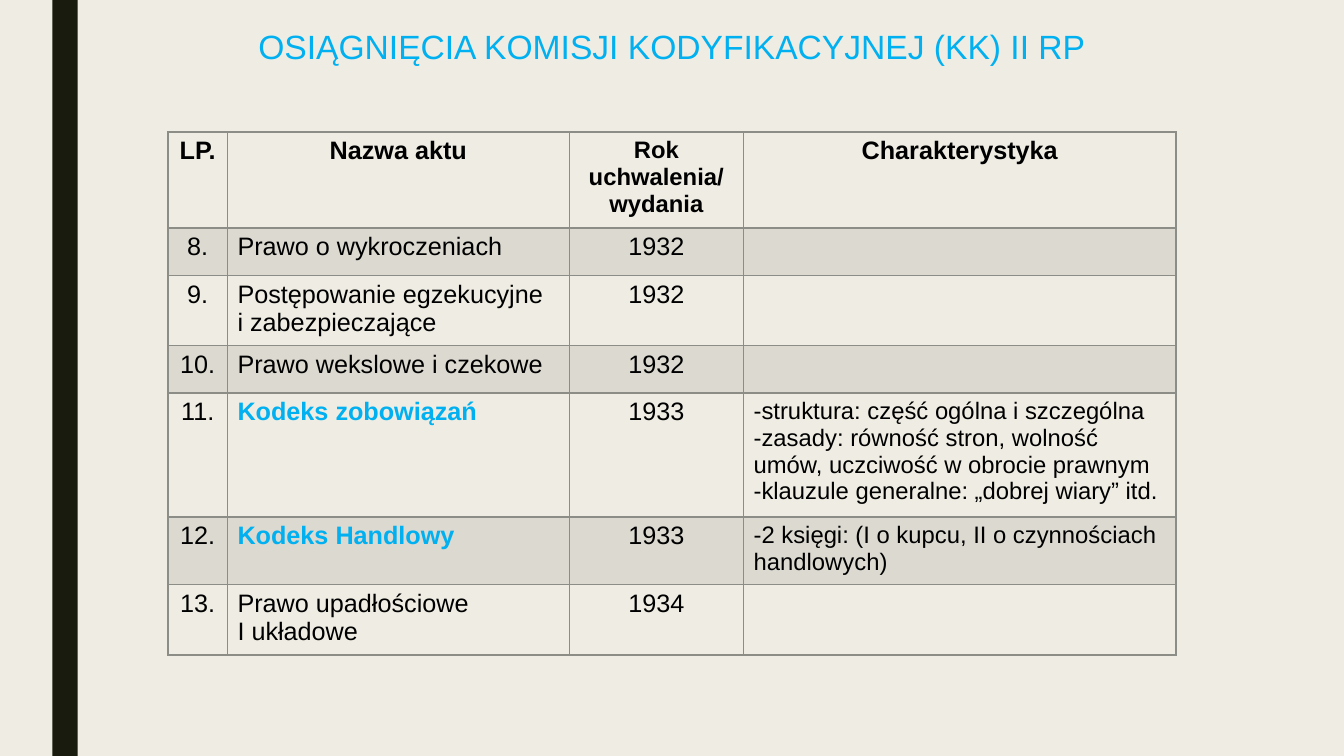
from dataclasses import dataclass

from lxml import etree
from pptx import Presentation
from pptx.dml.color import RGBColor
from pptx.enum.shapes import MSO_SHAPE
from pptx.enum.text import MSO_ANCHOR, PP_ALIGN
from pptx.oxml.ns import qn
from pptx.util import Inches, Pt

RECTANGLE = MSO_SHAPE.RECTANGLE
LEFT, CENTER = PP_ALIGN.LEFT, PP_ALIGN.CENTER
TOP = MSO_ANCHOR.TOP
TITLE_ONLY = 5
GRID_COLUMNS, GRID_ROWS = 80, 45


@dataclass(frozen=True)
class Theme:
    """Colours, font and type sizes of the deck."""
    font: str = "Arial"
    background: str = "EFEDE3"
    bar: str = "191B0E"
    accent: str = "00B0F0"
    text: str = "000000"
    rule: str = "8C8D86"
    band_opacity: int = 20
    title_size: int = 24
    cell_size: int = 18
    detail_size: int = 17


TITLE = "OSIĄGNIĘCIA KOMISJI KODYFIKACYJNEJ (KK) II RP"
HEADER = ("LP.", "Nazwa aktu", "Rok uchwalenia/ wydania", "Charakterystyka")
ACTS = [
    ("8.", "Prawo o wykroczeniach", "1932", ""),
    ("9.", "Postępowanie egzekucyjne\ni zabezpieczające", "1932", ""),
    ("10.", "Prawo wekslowe i czekowe", "1932", ""),
    ("11.", "Kodeks zobowiązań", "1933",
     "-struktura: część ogólna i szczególna\n"
     "-zasady: równość stron, wolność umów, uczciwość w obrocie prawnym\n"
     "-klauzule generalne: „dobrej wiary” itd."),
    ("12.", "Kodeks Handlowy", "1933",
     "-2 księgi: (I o kupcu, II o czynnościach handlowych)"),
    ("13.", "Prawo upadłościowe\nI układowe", "1934", ""),
]
COLUMN_WIDTHS = (3.54, 20.34, 10.38, 25.74)
ROW_HEIGHTS = (5.7, 2.82, 4.2, 2.82, 7.38, 4.02, 4.2)


class SlideBuilder:
    """Draws themed elements on the current slide, measured in grid units."""

    def __init__(self, deck, theme):
        """Add a slide with the theme's background."""
        self.theme = theme
        self.column = deck.slide_width / GRID_COLUMNS
        self.row = deck.slide_height / GRID_ROWS
        self.page = deck.slides.add_slide(deck.slide_layouts[TITLE_ONLY])
        self.paint(self.page.background.fill, theme.background)

    def paint(self, fill, color):
        """Make a fill solid in the given colour."""
        fill.solid()
        fill.fore_color.rgb = RGBColor.from_string(color)

    def frame(self, left, top, width, height):
        """Turn grid units into slide lengths."""
        return (round(left * self.column), round(top * self.row),
                round(width * self.column), round(height * self.row))

    def format_text(self, text_frame, size, color, align=LEFT, bold=False):
        """Apply one text style to every paragraph."""
        for para in text_frame.paragraphs:
            para.alignment = align
            para.font.size = Pt(size)
            for span in para.runs:
                span.font.name = self.theme.font
                span.font.size = Pt(size)
                span.font.bold = bold
                span.font.color.rgb = RGBColor.from_string(color)

    def bar(self, *place):
        """Draw the dark vertical bar."""
        shape = self.page.shapes.add_shape(RECTANGLE, *self.frame(*place))
        shape.shadow.inherit = False
        self.paint(shape.fill, self.theme.bar)
        shape.line.fill.background()

    def title(self, text, *place):
        """Fill and place the title placeholder."""
        box = self.page.shapes.title
        box.left, box.top, box.width, box.height = self.frame(*place)
        box.text_frame.text = text
        box.text_frame.vertical_anchor = TOP
        self.format_text(box.text_frame, self.theme.title_size, self.theme.accent, CENTER)

    def border(self, cell, side, width):
        """Draw one side of a cell."""
        properties = cell._tc.get_or_add_tcPr()
        line = etree.SubElement(properties, qn(f"a:ln{side}"), w=str(Pt(width)))
        fill = etree.SubElement(line, qn("a:solidFill"))
        etree.SubElement(fill, qn("a:srgbClr"), val=self.theme.rule)

    def fill_band(self, cell):
        """Tint a cell with the translucent rule colour."""
        self.paint(cell.fill, self.theme.rule)
        color = cell._tc.tcPr.find(qn("a:solidFill")).find(qn("a:srgbClr"))
        etree.SubElement(color, qn("a:alpha"), val=str(self.theme.band_opacity * 1000))

    def format_cell(self, cell, row, column):
        """Style a cell by its place in the table."""
        theme = self.theme
        text = cell.text_frame.text
        header = row == 0
        code = column == 1 and text.startswith("Kodeks")
        small = column == 2 if header else column == 3 and text
        self.format_text(
            cell.text_frame,
            theme.detail_size if small else theme.cell_size,
            theme.accent if code else theme.text,
            CENTER if header or column in (0, 2) else LEFT,
            header or code)
        widths = {"L": 1, "R": 1, "T": 2 if row == 1 else 1, "B": 2 if header else 1}
        for side, width in widths.items():
            self.border(cell, side, width)
        if row % 2:
            self.fill_band(cell)
        else:
            cell.fill.background()

    def table(self, rows, widths, heights, left, top):
        """Draw the table of acts."""
        place = self.frame(left, top, sum(widths), sum(heights))
        table = self.page.shapes.add_table(len(rows), len(widths), *place).table
        table.first_row = table.horz_banding = False
        for column, width in zip(table.columns, widths):
            column.width = round(width * self.column)
        for row, height in zip(table.rows, heights):
            row.height = round(height * self.row)
        for row, texts in enumerate(rows):
            for column, text in enumerate(texts):
                cell = table.cell(row, column)
                cell.text_frame.text = text
                self.format_cell(cell, row, column)


def main():
    """Build and save the deck."""
    deck = Presentation()
    deck.slide_width, deck.slide_height = Inches(13.33), Inches(7.5)
    slide = SlideBuilder(deck, Theme())
    slide.bar(3.12, 0, 1.5, GRID_ROWS)
    slide.title(TITLE, 10, 1.26, 60, 3.06)
    slide.table([HEADER, *ACTS], COLUMN_WIDTHS, ROW_HEIGHTS, 10, 7.86)
    deck.save("out.pptx")


if __name__ == "__main__":
    main()
